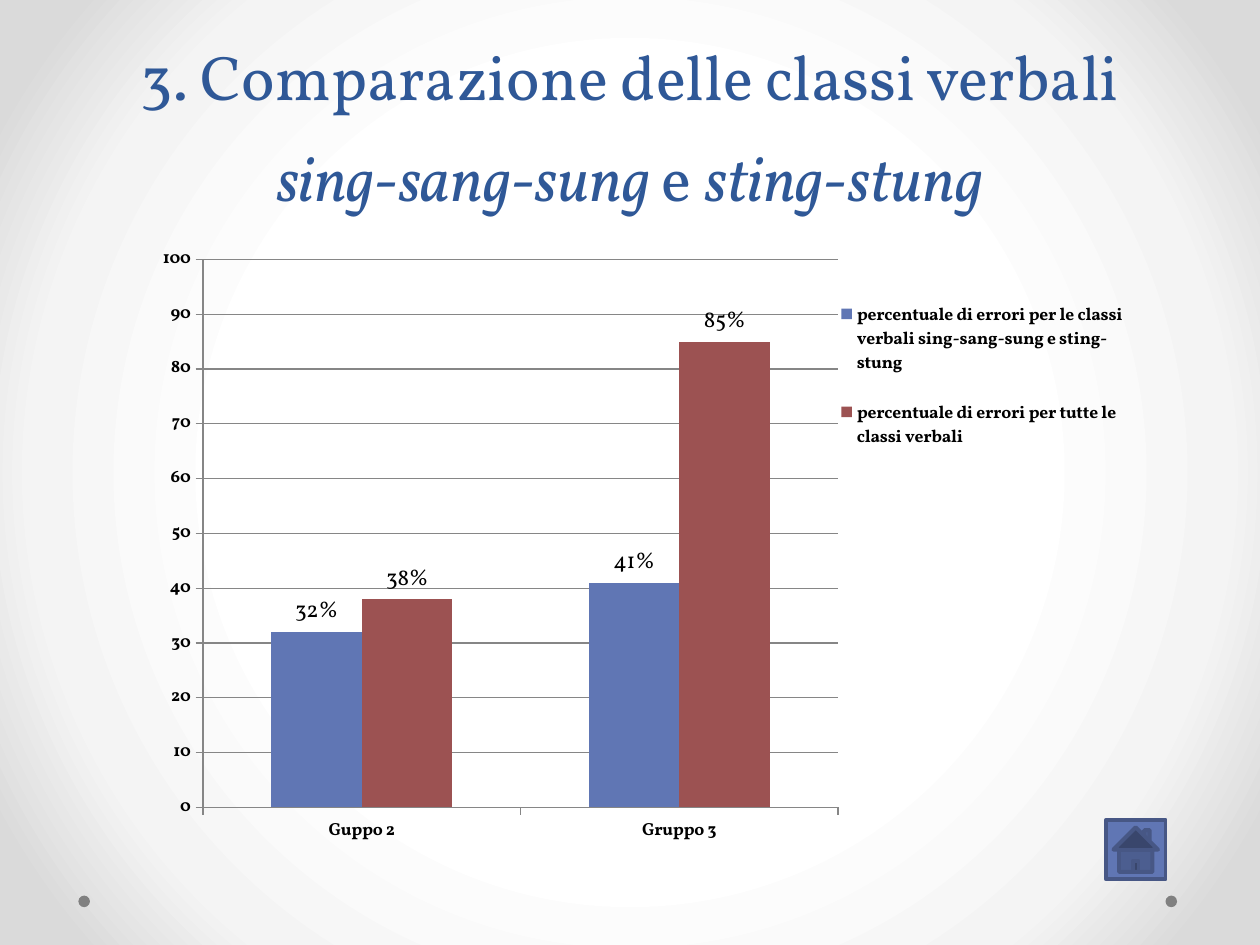
import pptx
import pptx.chart.data
import pptx.dml.color
import pptx.enum.chart
import pptx.enum.shapes
import pptx.enum.text
import pptx.oxml
import pptx.oxml.ns
import pptx.util

Pt = pptx.util.Pt
SHAPES = pptx.enum.shapes.MSO_SHAPE
FONT = "Vollkorn"
GROUPS = ["Guppo 2", "Gruppo 3"]
SERIES = [
    ("percentuale di errori per le classi verbali sing-sang-sung e sting-stung",
     (32, 41), "6076B4"),
    ("percentuale di errori per tutte le classi verbali", (38, 85), "9C5252"),
]


def color(code):
    return pptx.dml.color.RGBColor.from_string(code)


def style(font, size, code, bold=False, italic=False):
    font.name = FONT
    font.size = Pt(size)
    font.bold = bold
    font.italic = italic
    font.color.rgb = color(code)


def paint(slide, stops):
    """Give the slide a round gradient that starts at its centre."""
    fill = slide.background.fill
    fill.solid()
    marks = "".join(
        f'<a:gs pos="{pos * 1000}"><a:srgbClr val="{code}"/></a:gs>'
        for pos, code in stops)
    grad = pptx.oxml.parse_xml(
        f'<a:gradFill {pptx.oxml.ns.nsdecls("a")} rotWithShape="1">'
        f'<a:gsLst>{marks}</a:gsLst><a:path path="circle">'
        '<a:fillToRect l="50000" t="50000" r="50000" b="50000"/>'
        '</a:path></a:gradFill>')
    solid = slide.background._cSld.bg.bgPr.find(pptx.oxml.ns.qn("a:solidFill"))
    solid.getparent().replace(solid, grad)


def add_shape(slide, kind, left, top, size, fill, line=None):
    shape = slide.shapes.add_shape(kind, Pt(left), Pt(top), Pt(size), Pt(size))
    shape.shadow.inherit = False
    shape.fill.solid()
    shape.fill.fore_color.rgb = color(fill)
    if line:
        shape.line.color.rgb = color(line)
        shape.line.width = Pt(2.25)
    else:
        shape.line.fill.background()


def add_title(slide):
    frame = slide.shapes.add_textbox(Pt(36), Pt(0), Pt(648), Pt(126)).text_frame
    frame.word_wrap = True
    frame.vertical_anchor = pptx.enum.text.MSO_ANCHOR.BOTTOM
    para = frame.paragraphs[0]
    para.text = "3. Comparazione delle classi verbali\v"
    para.alignment = pptx.enum.text.PP_ALIGN.CENTER
    para.line_spacing = Pt(58)
    style(para.runs[0].font, 36, "2F5897")
    for text, italic in (("sing-sang-sung ", True), ("e ", False),
                         ("sting-stung", True)):
        run = para.add_run()
        run.text = text
        style(run.font, 36, "2F5897", italic=italic)


def place(parent, index, left, top, width, height, inner=False):
    """Fix a chart part at fractions of the chart's size."""
    for old in parent.findall(pptx.oxml.ns.qn("c:layout")):
        parent.remove(old)
    target = '<c:layoutTarget val="inner"/>' if inner else ""
    parent.insert(index, pptx.oxml.parse_xml(
        f'<c:layout {pptx.oxml.ns.nsdecls("c")}><c:manualLayout>{target}'
        '<c:xMode val="edge"/><c:yMode val="edge"/>'
        f'<c:x val="{left}"/><c:y val="{top}"/>'
        f'<c:w val="{width}"/><c:h val="{height}"/>'
        '</c:manualLayout></c:layout>'))


def format_axis(axis):
    axis.major_tick_mark = pptx.enum.chart.XL_TICK_MARK.OUTSIDE
    axis.minor_tick_mark = pptx.enum.chart.XL_TICK_MARK.NONE
    axis.format.line.color.rgb = color("868686")
    style(axis.tick_labels.font, 10, "000000", bold=True)


def add_chart(slide):
    data = pptx.chart.data.CategoryChartData()
    data.categories = GROUPS
    for name, vals, _ in SERIES:
        data.add_series(name, vals)
    chart = slide.shapes.add_chart(
        pptx.enum.chart.XL_CHART_TYPE.COLUMN_CLUSTERED,
        Pt(82), Pt(134), Pt(567), Pt(356), data).chart
    chart.has_title = False
    style(chart.font, 10, "000000", bold=True)

    format_axis(chart.category_axis)
    axis = chart.value_axis
    format_axis(axis)
    axis.minimum_scale, axis.maximum_scale, axis.major_unit = 0, 100, 10
    axis.has_major_gridlines = True
    axis.major_gridlines.format.line.color.rgb = color("868686")

    plot = chart.plots[0]
    plot.gap_width = 150
    plot.overlap = 0
    plot.vary_by_categories = False
    for series, (_, _, code) in zip(plot.series, SERIES):
        series.format.fill.solid()
        series.format.fill.fore_color.rgb = color(code)
        labels = series.data_labels
        labels.show_value = True
        labels.number_format = '0"%"'
        labels.number_format_is_linked = False
        labels.position = pptx.enum.chart.XL_LABEL_POSITION.OUTSIDE_END
        style(labels.font, 13, "000000")

    chart.has_legend = True
    legend = chart.legend
    legend.position = pptx.enum.chart.XL_LEGEND_POSITION.RIGHT
    legend.include_in_layout = False
    style(legend.font, 10, "000000", bold=True)
    place(chart._chartSpace.chart.plotArea, 0, 0.06, 0.04, 0.64, 0.88, inner=True)
    place(legend._element, 1, 0.7, 0.07, 0.29, 0.32)


def main():
    deck = pptx.Presentation()
    deck.slide_width, deck.slide_height = Pt(720), Pt(540)
    slide = deck.slides.add_slide(deck.slide_layouts[6])
    paint(slide, [(50, "FFFFFF"), (76, "F4F4F4"), (92, "DADADA")])
    for left in (666, 44.8):
        add_shape(slide, SHAPES.OVAL, left, 511.8, 6.6, "808080")
    add_title(slide)
    add_chart(slide)
    add_shape(slide, SHAPES.ACTION_BUTTON_HOME, 632, 468.5, 34, "6076B4", "475785")
    deck.save("out.pptx")


if __name__ == "__main__":
    main()
